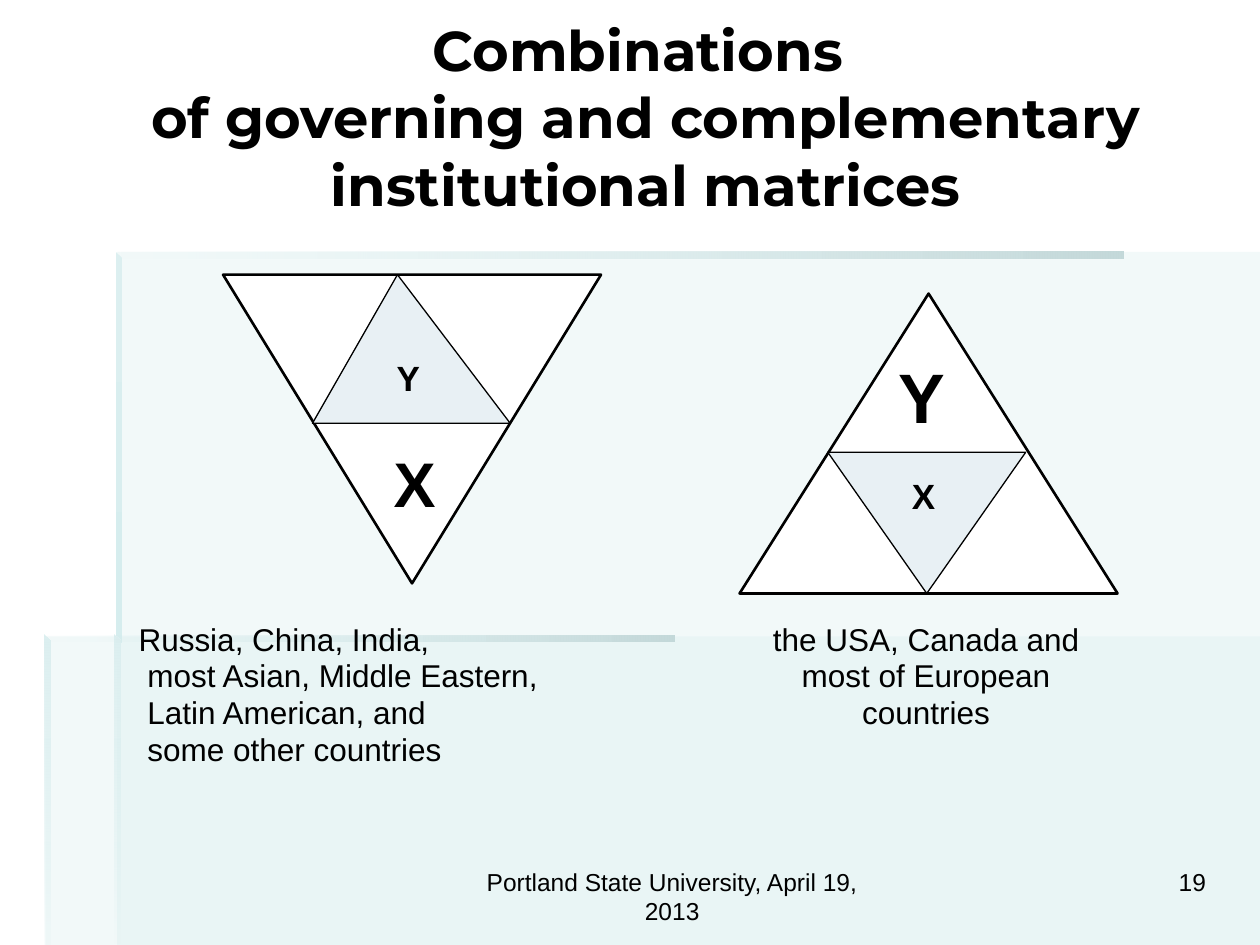
from dataclasses import dataclass

from lxml.etree import SubElement
from pptx import Presentation
from pptx.dml.color import RGBColor
from pptx.enum.shapes import MSO_SHAPE
from pptx.enum.text import MSO_ANCHOR, MSO_AUTO_SIZE, PP_ALIGN
from pptx.oxml.ns import qn
from pptx.util import Inches, Pt

COLS, ROWS = 100, 75


@dataclass(frozen=True)
class Theme:
    ink: str = "000000"
    paper: str = "FFFFFF"
    inner: str = "E8F0F4"
    wash: str = "D6EDEE"
    pale: str = "DCEFF0"
    deep: str = "C4D9DA"
    head: str = "Montserrat"
    body: str = "Arial"
    title: int = 32
    text: int = 18
    foot: int = 14
    small: int = 20
    lead: float = 20.9


@dataclass(frozen=True)
class Box:
    x: float
    y: float
    w: float
    h: float

    def inside(self, x, y, w, h):
        return Box(self.x + x, self.y + y, w, h)

    def around(self, x, y, w=6, h=8):
        return self.inside(x - w / 2, y - h / 2, w, h)

    def place(self):
        return [unit(v) for v in (self.x, self.y, self.w, self.h)]


THEME = Theme()


def unit(cells):
    return Inches(cells / 10)


def color(code):
    return RGBColor.from_string(code)


def fade(shape, alphas):
    marks = shape.element.spPr.iter(qn("a:srgbClr"))
    for mark, alpha in zip(marks, alphas):
        if alpha < 100:
            SubElement(mark, qn("a:alpha")).set("val", str(alpha * 1000))


def outline(slide, box, points):
    spots = [(unit(box.x + x), unit(box.y + y)) for x, y in points]
    pen = slide.shapes.build_freeform(*spots[0], scale=1)
    pen.add_line_segments(spots[1:], close=True)
    shape = pen.convert_to_shape()
    shape.shadow.inherit = False
    shape.line.fill.background()
    return shape


def wash(slide, box, points):
    shape = outline(slide, box, points)
    shape.fill.solid()
    shape.fill.fore_color.rgb = color(THEME.wash)
    fade(shape, [30])


def blend(shape, codes, alphas, angle):
    shape.fill.gradient()
    shape.fill.gradient_angle = angle
    for stop, code, place in zip(shape.fill.gradient_stops, codes, (0, 1)):
        stop.color.rgb = color(code)
        stop.position = place
    fade(shape, alphas)


def ledge(slide, box):
    shape = outline(slide, box, [(0, 0), (0, box.h), (box.w, box.h), (box.w, 0)])
    blend(shape, (THEME.wash, THEME.deep), (0, 100), 0)


def edge(slide, box, alpha):
    shape = outline(slide, box, [(0, 0), (0, box.h), (box.w, box.h), (box.w, box.w)])
    blend(shape, (THEME.pale, THEME.wash), (100, alpha), 270)


def backdrop(slide, box):
    left, mid, top, low = 3.6, 9.3, 20, 50.5
    wash(slide, box, [(mid, low), (mid, box.h), (box.w, box.h), (box.w, low)])
    wash(slide, box, [(mid, low), (left, low), (left, box.h),
                      (box.w, box.h), (box.w, top), (mid, top)])
    ledge(slide, box.inside(9.2, top, 80, 0.5))
    edge(slide, box.inside(9.2, top, 0.5, 31), 100)
    edge(slide, box.inside(9.1, 50.4, 0.5, 24.6), 0)
    ledge(slide, box.inside(3.5, 50.4, 50, 0.5))
    edge(slide, box.inside(3.5, 50.4, 0.5, 24.6), 10)


def write(para, text, size, face=THEME.body, bold=False):
    run = para.add_run()
    run.text = text
    run.font.size = Pt(size)
    run.font.name = face
    run.font.bold = bold
    run.font.color.rgb = color(THEME.ink)


def label(slide, box, lines, size, align, bold=False, inset=0.0,
          anchor=MSO_ANCHOR.TOP, lead=None, hang=0.0):
    frame = slide.shapes.add_textbox(*box.place()).text_frame
    frame.word_wrap = True
    frame.vertical_anchor = anchor
    frame.margin_left = frame.margin_right = unit(inset)
    frame.margin_top = frame.margin_bottom = unit(inset / 2)
    for row, line in enumerate(lines):
        para = frame.add_paragraph() if row else frame.paragraphs[0]
        para.alignment = align
        if lead:
            para.line_spacing = Pt(lead)
        if row and hang:
            para._p.get_or_add_pPr().set("marL", str(unit(hang)))
        write(para, line, size, bold=bold)


def heading(slide, box):
    title = slide.shapes.title
    title.left, title.top, title.width, title.height = box.place()
    frame = title.text_frame
    frame.word_wrap = True
    frame.auto_size = MSO_AUTO_SIZE.NONE
    frame.vertical_anchor = MSO_ANCHOR.MIDDLE
    para = frame.paragraphs[0]
    para.alignment = PP_ALIGN.CENTER
    write(para, "Combinations ", THEME.title, THEME.head, True)
    para.add_line_break()
    write(para, "of governing and complementary institutional matrices",
          THEME.title, THEME.head, True)


def triangle(slide, box, fill, width, turn, peak=0.5):
    shape = slide.shapes.add_shape(MSO_SHAPE.ISOSCELES_TRIANGLE, *box.place())
    shape.shadow.inherit = False
    shape.adjustments[0] = peak
    shape.rotation = turn
    shape.fill.solid()
    shape.fill.fore_color.rgb = color(fill)
    shape.line.color.rgb = color(THEME.ink)
    shape.line.width = Pt(width)


def matrix(slide, box, inner, turn, peak, marks):
    triangle(slide, box, THEME.paper, 1.5, turn)
    triangle(slide, box.inside(*inner), THEME.inner, 0.75, 180 - turn, peak)
    for text, size, x, y in marks:
        label(slide, box.around(x, y), [text], size, PP_ALIGN.CENTER,
              bold=True, anchor=MSO_ANCHOR.MIDDLE)


def footer(slide, box):
    label(slide, box.inside(0, 0, 31.7, box.h),
          ["Portland State University, April 19, 2013"],
          THEME.foot, PP_ALIGN.CENTER, inset=1)
    label(slide, box.inside(38.4, 0, 20.8, box.h), ["19"],
          THEME.foot, PP_ALIGN.RIGHT, inset=1)


def main():
    deck = Presentation()
    deck.slide_width, deck.slide_height = unit(COLS), unit(ROWS)
    slide = deck.slides.add_slide(deck.slide_layouts[5])
    backdrop(slide, Box(0, 0, COLS, ROWS))
    heading(slide, Box(5, 3, 92.5, 12.5))
    label(slide, Box(11, 49.3, 38, 12),
          ["Russia, China, India,", "most Asian, Middle Eastern,",
           "Latin American, and", "some other countries"],
          THEME.text, PP_ALIGN.LEFT, lead=THEME.lead, hang=0.7)
    label(slide, Box(58.5, 49.3, 30, 9),
          ["the USA, Canada and", "most of European", "countries"],
          THEME.text, PP_ALIGN.CENTER, lead=THEME.lead)
    matrix(slide, Box(17.7, 21.8, 30, 24.5), (7.1, 0, 15.7, 11.8), 180, 0.43,
           [("Y", THEME.small, 14.7, 8.2), ("X", 36, 15.2, 16.5)])
    matrix(slide, Box(58.7, 23.3, 30, 23.8), (7, 12.6, 15.7, 11.2), 0, 0.5,
           [("Y", 40, 14.5, 8.1), ("X", THEME.small, 14.6, 16)])
    footer(slide, Box(37.5, 68.3, 59.2, 5.2))
    deck.save("out.pptx")


if __name__ == "__main__":
    main()
